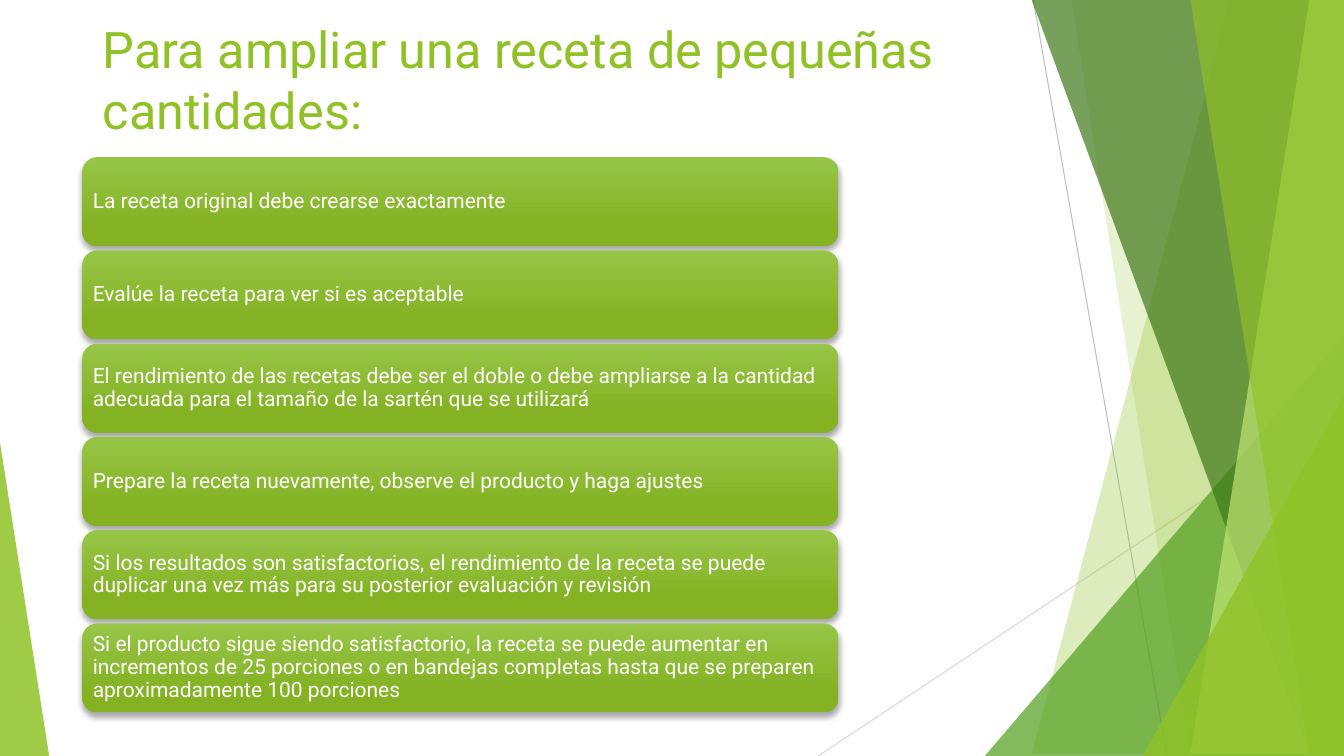
from lxml.etree import SubElement
from pptx import Presentation
from pptx.dml.color import RGBColor
from pptx.enum.shapes import MSO_CONNECTOR, MSO_SHAPE
from pptx.enum.text import MSO_ANCHOR, MSO_AUTO_SIZE, PP_ALIGN
from pptx.oxml.ns import qn
from pptx.util import Cm, Pt

WIDTH, HEIGHT = 33.87, 19.05
FONT = "Roboto"
GREEN = "90C226"

TITLE = "Para ampliar una receta de pequeñas cantidades:"
STEPS = [
    "La receta original debe crearse exactamente",
    "Evalúe la receta para ver si es aceptable",
    "El rendimiento de las recetas debe ser el doble o debe ampliarse a la "
    "cantidad adecuada para el tamaño de la sartén que se utilizará",
    "Prepare la receta nuevamente, observe el producto y haga ajustes",
    "Si los resultados son satisfactorios, el rendimiento de la receta se puede "
    "duplicar una vez más para su posterior evaluación y revisión",
    "Si el producto sigue siendo satisfactorio, la receta se puede aumentar en "
    "incrementos de 25 porciones o en bandejas completas hasta que se preparen "
    "aproximadamente 100 porciones",
]


def rgb(color):
    return RGBColor.from_string(color)


def set_alpha(parent, percent):
    SubElement(parent, qn("a:alpha"), val=str(percent * 1000))


def style_facet(sp, color, opacity):
    sp.shadow.inherit = False
    sp.fill.solid()
    sp.fill.fore_color.rgb = rgb(color)
    set_alpha(sp.fill._xPr.find(".//" + qn("a:srgbClr")), opacity)
    sp.line.fill.background()


def add_line(s, x1, y1, x2, y2, color):
    line = s.shapes.add_connector(
        MSO_CONNECTOR.STRAIGHT, Cm(x1), Cm(y1), Cm(x2), Cm(y2))
    line.line.color.rgb = rgb(color)
    line.line.width = Pt(0.75)
    SubElement(line._element.spPr, qn("a:effectLst"))


def add_band(s, top_x, bottom_x, color, opacity):
    """Full-height band from a slanted left edge to the slide's right edge."""
    builder = s.shapes.build_freeform(top_x, 0, scale=Cm(1))
    builder.add_line_segments(
        [(WIDTH, 0), (WIDTH, HEIGHT), (bottom_x, HEIGHT)], close=True)
    style_facet(builder.convert_to_shape(), color, opacity)


def add_triangle(s, x, y, w, apex, color, opacity):
    """Right triangle standing on the slide's bottom edge."""
    sp = s.shapes.add_shape(
        MSO_SHAPE.ISOSCELES_TRIANGLE, Cm(x), Cm(y), Cm(w), Cm(HEIGHT - y))
    sp.adjustments[0] = apex
    style_facet(sp, color, opacity)


def add_background(s):
    add_line(s, 26.04, 0, 29.41, HEIGHT, "BFBFBF")
    add_line(s, WIDTH, 10.24, 20.62, HEIGHT, "D9D9D9")
    add_band(s, 31.19, 25.5, GREEN, 30)
    add_band(s, 26.67, 30.05, GREEN, 20)
    add_triangle(s, 24.82, 8.46, 9.05, 1, "54A021", 72)
    add_band(s, 25.93, 32.79, "3F7819", 70)
    add_band(s, 33.1, 30.28, "C0E474", 70)
    add_band(s, 30.38, 33.48, GREEN, 65)
    add_triangle(s, 28.8, 9.98, 5.07, 1, GREEN, 80)
    add_triangle(s, 0, 11.15, 1.24, 0, GREEN, 85)


def set_title(s):
    title = s.shapes.title
    title.left, title.top = Cm(2.34), Cm(0.33)
    title.width, title.height = Cm(23.88), Cm(3.66)
    tf = title.text_frame
    tf.text = TITLE
    tf.word_wrap = True
    tf.auto_size = MSO_AUTO_SIZE.NONE
    tf.vertical_anchor = MSO_ANCHOR.TOP
    p = tf.paragraphs[0]
    p.alignment = PP_ALIGN.LEFT
    p.font.name, p.font.size = FONT, Pt(36)
    p.font.color.rgb = rgb(GREEN)


def add_card(s, y, text):
    sp = s.shapes.add_shape(
        MSO_SHAPE.ROUNDED_RECTANGLE, Cm(2.08), Cm(y), Cm(19.05), Cm(2.24))
    # Vertical gradient
    sp.fill.gradient()
    sp.fill.gradient_angle = 270
    for stop, position, color in zip(
            sp.fill.gradient_stops, (0, 0.78), ("97C547", "84B223")):
        stop.position = position
        stop.color.rgb = rgb(color)
    sp.line.fill.background()
    # Soft shadow below
    sp.shadow.inherit = False
    effects = sp._element.spPr.find(qn("a:effectLst"))
    shadow = SubElement(
        effects, qn("a:outerShdw"), blurRad=str(Pt(4)), dist=str(Pt(3)),
        dir="5400000", algn="ctr", rotWithShape="0")
    set_alpha(SubElement(shadow, qn("a:srgbClr"), val="000000"), 35)
    # Text
    tf = sp.text_frame
    tf.word_wrap = True
    tf.vertical_anchor = MSO_ANCHOR.MIDDLE
    tf.margin_left = tf.margin_right = Cm(0.15)
    tf.margin_top = tf.margin_bottom = Cm(0.15)
    tf.text = text
    p = tf.paragraphs[0]
    p.alignment = PP_ALIGN.LEFT
    p.line_spacing = 0.9
    p.font.name, p.font.size = FONT, Pt(15)
    p.font.color.rgb = rgb("FFFFFF")


def main():
    prs = Presentation()
    prs.slide_width, prs.slide_height = Cm(WIDTH), Cm(HEIGHT)
    s = prs.slides.add_slide(prs.slide_layouts[5])
    add_background(s)
    set_title(s)
    for i, step in enumerate(STEPS):
        add_card(s, 3.96 + 2.35 * i, step)
    prs.save("out.pptx")


if __name__ == "__main__":
    main()
